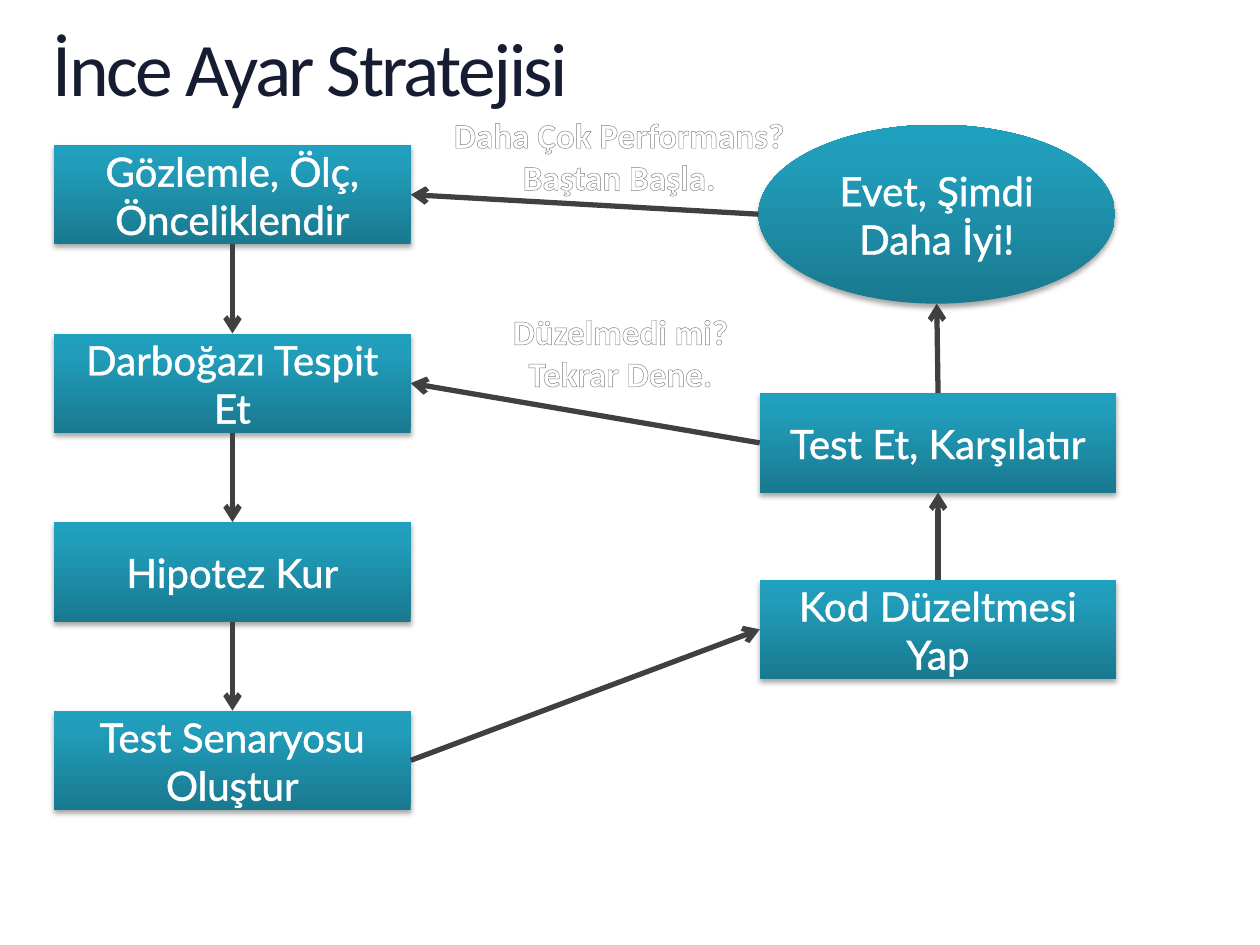
from lxml import etree
from pptx import Presentation
from pptx import util as u
from pptx.dml.color import RGBColor
from pptx.enum import shapes, text
from pptx.oxml.ns import qn

THEME = {
    "title": {"size": 43.2, "font": "Calibri", "fill": [(0, "2E59B0"), (49, "161D32"), (100, "000000")]},
    "step": {"size": 23, "font": "Lato", "fill": [(0, "FFFFFF")], "outline": ("FFFFFF", 1.45)},
    "caption": {"size": 20, "font": "Calibri", "bold": True, "outline": ("7D7D7D", 0.83),
                "fill": [(0, "FFFFFF"), (9, "FFFFFF"), (50, "7F7F7F"), (79, "FFFFFF"), (100, "FFFFFF")]},
    "box": [(0, "19798F"), (80, "219DBA"), (100, "1EA0BE")],
    "arrow": ("404040", 3),
}

TITLE = "İnce Ayar Stratejisi"
LEFT_STEPS = [
    ("observe", "Gözlemle, Ölç, Önceliklendir"),
    ("bottleneck", "Darboğazı Tespit Et"),
    ("hypothesis", "Hipotez Kur"),
    ("scenario", "Test Senaryosu Oluştur"),
]
RIGHT_STEPS = [("test", "Test Et, Karşılatır"), ("fix", "Kod Düzeltmesi Yap")]
RESULT = ("better", "Evet, Şimdi Daha İyi!")
CAPTIONS = [
    (["Düzelmedi mi?", "Tekrar Dene."], 3.27, 2.41),
    (["Daha Çok Performans?", "Baştan Başla."], 3.26, 0.85),
]
TOP, LEFT, BOTTOM, RIGHT = range(4)
ARROWS = [
    ("scenario", RIGHT, "fix", LEFT),
    ("observe", BOTTOM, "bottleneck", TOP),
    ("bottleneck", BOTTOM, "hypothesis", TOP),
    ("hypothesis", BOTTOM, "scenario", TOP),
    ("fix", TOP, "test", BOTTOM),
    ("test", TOP, "better", BOTTOM),
    ("better", LEFT, "observe", RIGHT),
    ("test", LEFT, "bottleneck", RIGHT),
]

BOX_WIDTH, BOX_HEIGHT, OVAL_HEIGHT = 2.83, 0.79, 1.42
LEFT_X, LEFT_TOP, LEFT_PITCH = 0.43, 1.15, 4.49 / 3
RIGHT_X, RIGHT_TOP, RIGHT_PITCH = 6.03, 3.12, 1.48
OVAL_X, OVAL_TOP = 6.02, 0.99


def apply(target, values):
    for name, value in values.items():
        setattr(target, name, value)


def add_element(parent, tag, **attributes):
    return etree.SubElement(parent, qn(tag), {key: str(value) for key, value in attributes.items()})


def add_fill(parent, stops, angle=90):
    if len(stops) == 1:
        add_element(add_element(parent, "a:solidFill"), "a:srgbClr", val=stops[0][1])
        return
    gradient = add_element(parent, "a:gradFill", rotWithShape=1)
    stop_list = add_element(gradient, "a:gsLst")
    for position, color in stops:
        add_element(add_element(stop_list, "a:gs", pos=position * 1000), "a:srgbClr", val=color)
    add_element(gradient, "a:lin", ang=angle * 60000, scaled=0)


def write(shape, lines, style, frame_format, paragraph_format, spacing=None):
    frame = shape.text_frame
    apply(frame, {"word_wrap": True, **frame_format})
    for index, line in enumerate(lines):
        paragraph = frame.paragraphs[0] if index == 0 else frame.add_paragraph()
        apply(paragraph, paragraph_format)
        run = paragraph.add_run()
        run.text = line
        properties = run.font._element
        if "outline" in style:
            color, width = style["outline"]
            outline = add_element(properties, "a:ln", w=int(u.Pt(width)))
            add_fill(outline, [(0, color)])
        add_fill(properties, style["fill"])
        apply(run.font, {"size": u.Pt(style["size"]), "name": style["font"], "bold": style.get("bold", False)})
        if spacing is not None:
            properties.set("spc", str(spacing))


def add_step(slide, label, kind, left, top, height):
    shape = slide.shapes.add_shape(kind, *map(u.Inches, (left, top, BOX_WIDTH, height)))
    properties = shape._element.spPr
    add_fill(properties, THEME["box"], 270)
    shape.line.fill.background()
    shape.shadow.inherit = False
    shadow = add_element(properties.find(qn("a:effectLst")), "a:outerShdw", blurRad=int(u.Pt(3.1)),
                         dist=int(u.Pt(1.8)), dir=90 * 60000, rotWithShape=0)
    add_element(add_element(shadow, "a:srgbClr", val="000000"), "a:alpha", val=35000)
    write(shape, [label], THEME["step"], {"vertical_anchor": text.MSO_ANCHOR.MIDDLE},
          {"alignment": text.PP_ALIGN.CENTER})
    return shape


def side_point(shape, side):
    center_x, center_y = shape.left + shape.width // 2, shape.top + shape.height // 2
    return {
        TOP: (center_x, shape.top),
        LEFT: (shape.left, center_y),
        BOTTOM: (center_x, shape.top + shape.height),
        RIGHT: (shape.left + shape.width, center_y),
    }[side]


def add_arrow(slide, source, source_side, target, target_side):
    connector = slide.shapes.add_connector(
        shapes.MSO_CONNECTOR.STRAIGHT, *side_point(source, source_side), *side_point(target, target_side))
    if source.auto_shape_type == shapes.MSO_SHAPE.RECTANGLE:
        connector.begin_connect(source, source_side)
    if target.auto_shape_type == shapes.MSO_SHAPE.RECTANGLE:
        connector.end_connect(target, target_side)
    color, width = THEME["arrow"]
    connector.line.color.rgb = RGBColor.from_string(color)
    connector.line.width = u.Pt(width)
    add_element(connector.line._get_or_add_ln(), "a:tailEnd", type="arrow")
    add_element(connector._element.spPr, "a:effectLst")


def main():
    presentation = Presentation()
    apply(presentation, {"slide_width": u.Inches(10), "slide_height": u.Inches(7.5)})
    slide = presentation.slides.add_slide(presentation.slide_layouts[6])

    title = slide.shapes.add_textbox(*map(u.Inches, (0.42, 0.25, 9.17, 1.27)))
    margins = dict.fromkeys(("margin_left", "margin_top", "margin_right", "margin_bottom"), 0)
    write(title, [TITLE], THEME["title"], margins, {"line_spacing": 0.9}, spacing=-150)

    steps = {}
    columns = [(LEFT_STEPS, LEFT_X, LEFT_TOP, LEFT_PITCH), (RIGHT_STEPS, RIGHT_X, RIGHT_TOP, RIGHT_PITCH)]
    for column, left, top, pitch in columns:
        for row, (key, label) in enumerate(column):
            steps[key] = add_step(slide, label, shapes.MSO_SHAPE.RECTANGLE, left, top + row * pitch, BOX_HEIGHT)
    key, label = RESULT
    steps[key] = add_step(slide, label, shapes.MSO_SHAPE.OVAL, OVAL_X, OVAL_TOP, OVAL_HEIGHT)

    for source, source_side, target, target_side in ARROWS:
        add_arrow(slide, steps[source], source_side, steps[target], target_side)

    for lines, left, top in CAPTIONS:
        caption = slide.shapes.add_textbox(*map(u.Inches, (left, top, 3.31, 0.77)))
        write(caption, lines, THEME["caption"], {"auto_size": text.MSO_AUTO_SIZE.SHAPE_TO_FIT_TEXT},
              {"alignment": text.PP_ALIGN.CENTER})

    presentation.save("out.pptx")


if __name__ == "__main__":
    main()
